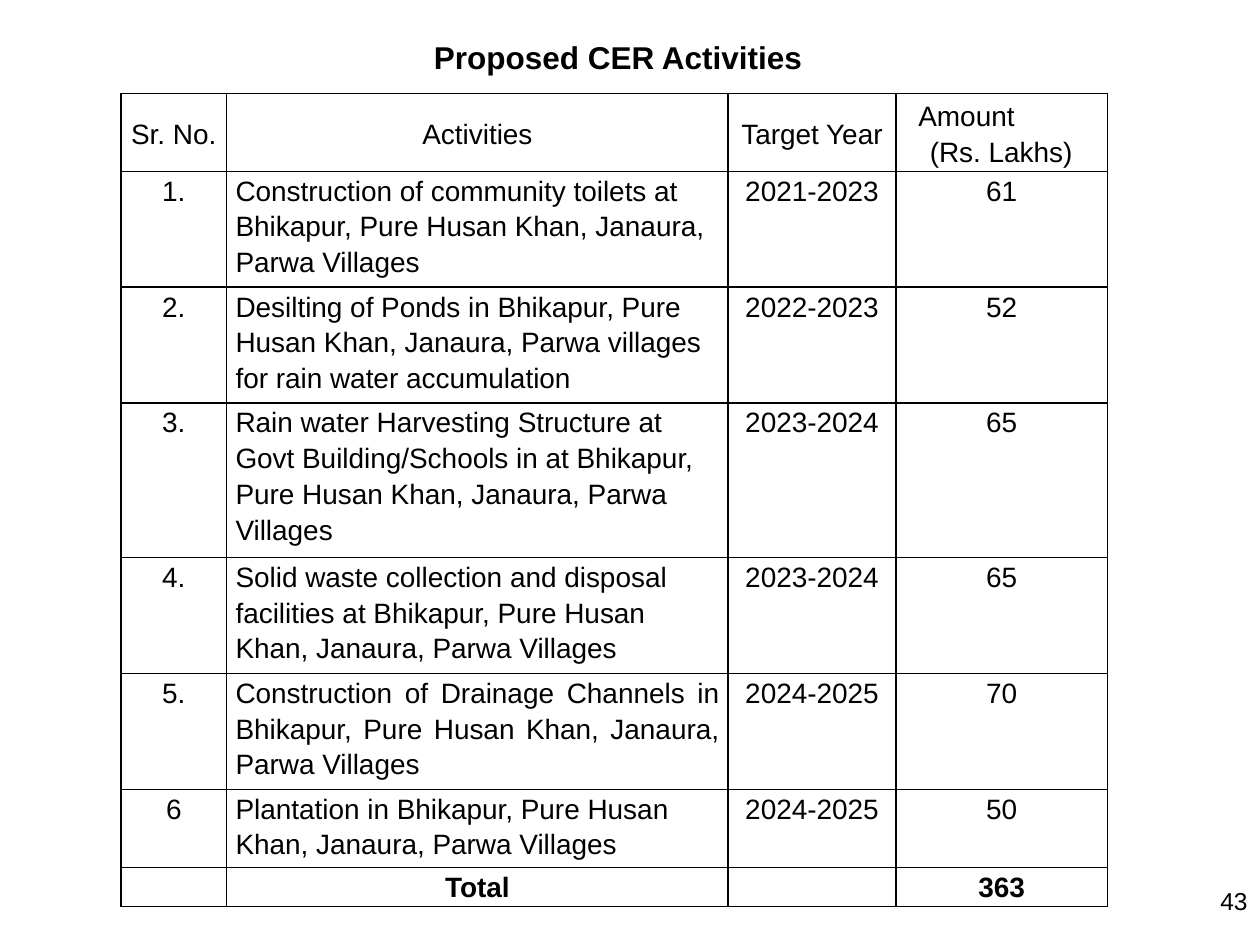
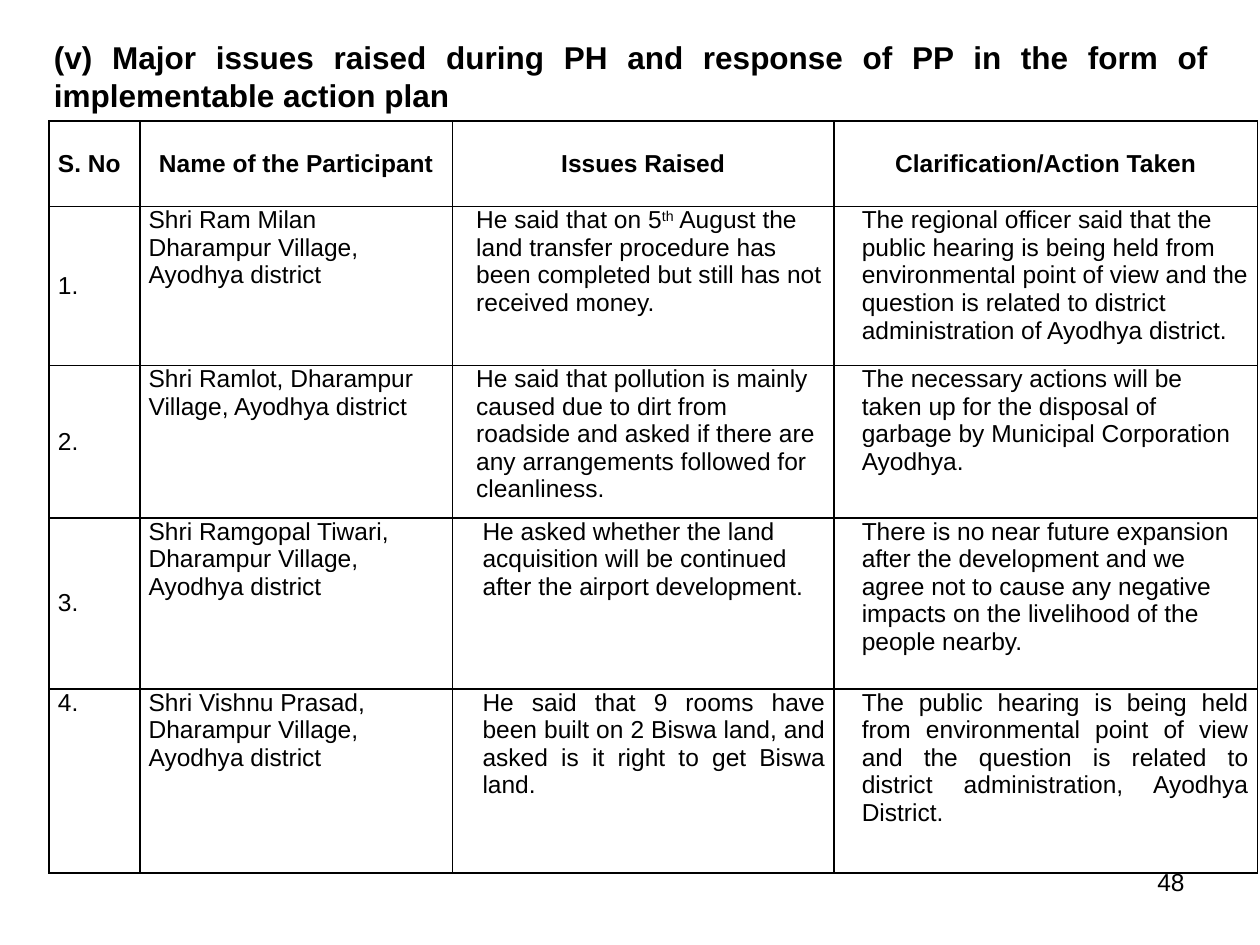
from lxml import etree
from pptx import Presentation
from pptx import util as u
from pptx.dml.color import RGBColor
from pptx.enum import text as t
from pptx.oxml.ns import qn

COLOURS = {"ink": "000000", "paper": "FFFFFF"}
FONT = "Arial"
LEFT, CENTRE, JUSTIFY, RIGHT = (
    t.PP_ALIGN.LEFT, t.PP_ALIGN.CENTER, t.PP_ALIGN.JUSTIFY, t.PP_ALIGN.RIGHT)
TOP, MIDDLE = t.MSO_ANCHOR.TOP, t.MSO_ANCHOR.MIDDLE

CER_COLUMNS = [0.84, 3.98, 1.33, 1.68]
CER_ROW_HEIGHTS = [0.62, 0.92, 0.92, 1.22, 0.92, 0.92, 0.62, 0.31]
CER_ROWS = [
    ["Sr. No.", "Activities", "Target Year", "Amount\n(Rs. Lakhs)"],
    ["1.", "Construction of community toilets at Bhikapur, Pure Husan Khan, "
     "Janaura, Parwa Villages", "2021-2023", "61"],
    ["2.", "Desilting of Ponds in Bhikapur, Pure Husan Khan, Janaura, Parwa "
     "villages for rain water accumulation", "2022-2023", "52"],
    ["3.", "Rain water Harvesting Structure at Govt Building/Schools in at "
     "Bhikapur, Pure Husan Khan, Janaura, Parwa Villages", "2023-2024", "65"],
    ["4.", "Solid waste collection and disposal facilities at Bhikapur, "
     "Pure Husan Khan, Janaura, Parwa Villages", "2023-2024", "65"],
    ["5.", "Construction of Drainage Channels in Bhikapur, Pure Husan Khan, "
     "Janaura, Parwa Villages", "2024-2025", "70"],
    ["6", "Plantation in Bhikapur, Pure Husan Khan, Janaura, Parwa Villages",
     "2024-2025", "50"],
    ["", "Total", "", "363"],
]

ISSUE_COLUMNS = [0.72, 2.48, 3.03, 3.36]
ISSUE_ROW_HEIGHTS = [0.68, 1.26, 1.21, 1.36, 1.46]
ISSUE_ROWS = [
    ["S. No", "Name of the Participant", "Issues Raised",
     "Clarification/Action Taken"],
    ["1.", "Shri Ram Milan Dharampur Village, Ayodhya district",
     "He said that on 5^th^ August the land transfer procedure has been "
     "completed but still has not received money.",
     "The regional officer said that the public hearing is being held from "
     "environmental point of view and the question is related to district "
     "administration of Ayodhya district."],
    ["2.", "Shri Ramlot, Dharampur Village, Ayodhya district",
     "He said that pollution is mainly caused due to dirt from roadside and "
     "asked if there are any arrangements followed for cleanliness.",
     "The necessary actions will be taken up for the disposal of garbage by "
     "Municipal Corporation Ayodhya."],
    ["3.", "Shri Ramgopal Tiwari, Dharampur Village, Ayodhya district",
     "He asked whether the land acquisition will be continued after the "
     "airport development.",
     "There is no near future expansion after the development and we agree "
     "not to cause any negative impacts on the livelihood of the people "
     "nearby."],
    ["4.", "Shri Vishnu Prasad, Dharampur Village, Ayodhya district",
     "He said that 9 rooms have been built on 2 Biswa land, and asked is it "
     "right to get Biswa land.",
     "The public hearing is being held from environmental point of view and "
     "the question is related to district administration, Ayodhya District."],
]


def write_paragraph(para, content, size, bold=False, align=LEFT, spacing=1.0,
                    indent=0):
    """Fill a paragraph; words between ^ marks become superscript."""
    para.alignment = align
    para.line_spacing = spacing
    if indent:
        para._p.get_or_add_pPr().set("marL", str(u.Inches(indent)))
    for index, part in enumerate(content.split("^")):
        span = para.add_run()
        span.text = part
        span.font.name = FONT
        span.font.size = u.Pt(size)
        span.font.bold = bold
        span.font.color.rgb = RGBColor.from_string(COLOURS["ink"])
        if index % 2:
            span._r.get_or_add_rPr().set("baseline", "30000")


def add_text(page, place, content, size, **style):
    box = page.shapes.add_textbox(*map(u.Inches, place))
    box.text_frame.word_wrap = True
    write_paragraph(box.text_frame.paragraphs[0], content, size, **style)


def add_title(page, place, content, align):
    add_text(page, place, content, 18, bold=True, align=align)


def add_page_number(page, left, top, number):
    add_text(page, (left, top, 2.33, 0.52), number, 14, align=RIGHT)


def frame_cell(cell):
    """Give a cell its thin border, plain fill and narrow margins."""
    properties = cell._tc.get_or_add_tcPr()
    for side in ("a:lnL", "a:lnR", "a:lnT", "a:lnB"):
        line = etree.SubElement(properties, qn(side), w=str(u.Pt(1)))
        fill = etree.SubElement(line, qn("a:solidFill"))
        etree.SubElement(fill, qn("a:srgbClr"), val=COLOURS["ink"])
    cell.fill.solid()
    cell.fill.fore_color.rgb = RGBColor.from_string(COLOURS["paper"])
    cell.margin_left = cell.margin_right = u.Inches(0.07)
    cell.margin_top = cell.margin_bottom = 0


def add_grid(page, left, top, columns, heights, rows, size, style_at):
    """Draw a table; style_at(row, column) gives an anchor and text style."""
    frame = page.shapes.add_table(
        len(rows), len(columns), u.Inches(left), u.Inches(top),
        u.Inches(sum(columns)), u.Inches(sum(heights)))
    table = frame.table
    table.horz_banding = False
    for column, width in zip(table.columns, columns):
        column.width = u.Inches(width)
    for r, (height, contents) in enumerate(zip(heights, rows)):
        table.rows[r].height = u.Inches(height)
        for c, content in enumerate(contents):
            cell = table.cell(r, c)
            frame_cell(cell)
            if not content:
                continue
            anchor, style = style_at(r, c)
            cell.vertical_anchor = anchor
            indents = style.pop("indents", [0])
            cell.text_frame.text = ""
            for i, line in enumerate(content.split("\n")):
                paras = cell.text_frame
                para = paras.add_paragraph() if i else paras.paragraphs[0]
                write_paragraph(para, line, size, indent=indents[i], **style)


def cer_style(row, column):
    total_row = len(CER_ROWS) - 1
    style = {"align": CENTRE, "spacing": 1.15, "bold": row == total_row}
    if row == 0 and column == 3:
        style.update(align=LEFT, indents=[0.11, 0.2])
    elif column == 1 and 0 < row < total_row:
        style["align"] = JUSTIFY if row == 5 else LEFT
    return (TOP if row else MIDDLE), style


def issue_style(row, column):
    if row == 0:
        return MIDDLE, {"align": CENTRE if column else LEFT, "bold": True}
    last = row == len(ISSUE_ROWS) - 1
    issue_indent = 0.12 if row < 3 else 0.17
    style = {"align": JUSTIFY if last and column > 1 else LEFT,
             "indents": [(0, 0, issue_indent, 0.15)[column]]}
    return (MIDDLE if column == 0 and not last else TOP), style


def add_cer_page(page):
    add_title(page, (3.33, 0.25, 3.15, 0.4), "Proposed CER Activities", CENTRE)
    add_page_number(page, 7.67, 6.98, "43")
    add_grid(page, 0.96, 0.74, CER_COLUMNS, CER_ROW_HEIGHTS, CER_ROWS, 16,
             cer_style)


def add_issues_page(page):
    add_page_number(page, 7.17, 6.83, "48")
    add_title(page, (0.33, 0.25, 9.36, 0.71),
              "(v) Major issues raised during PH and response of PP in the "
              "form of implementable action plan", JUSTIFY)
    add_grid(page, 0.39, 0.96, ISSUE_COLUMNS, ISSUE_ROW_HEIGHTS, ISSUE_ROWS,
             14, issue_style)


def main():
    deck = Presentation()
    deck.slide_width, deck.slide_height = u.Inches(10), u.Inches(7.5)
    for build in (add_cer_page, add_issues_page):
        build(deck.slides.add_slide(deck.slide_layouts[6]))
    deck.save("out.pptx")


if __name__ == "__main__":
    main()
